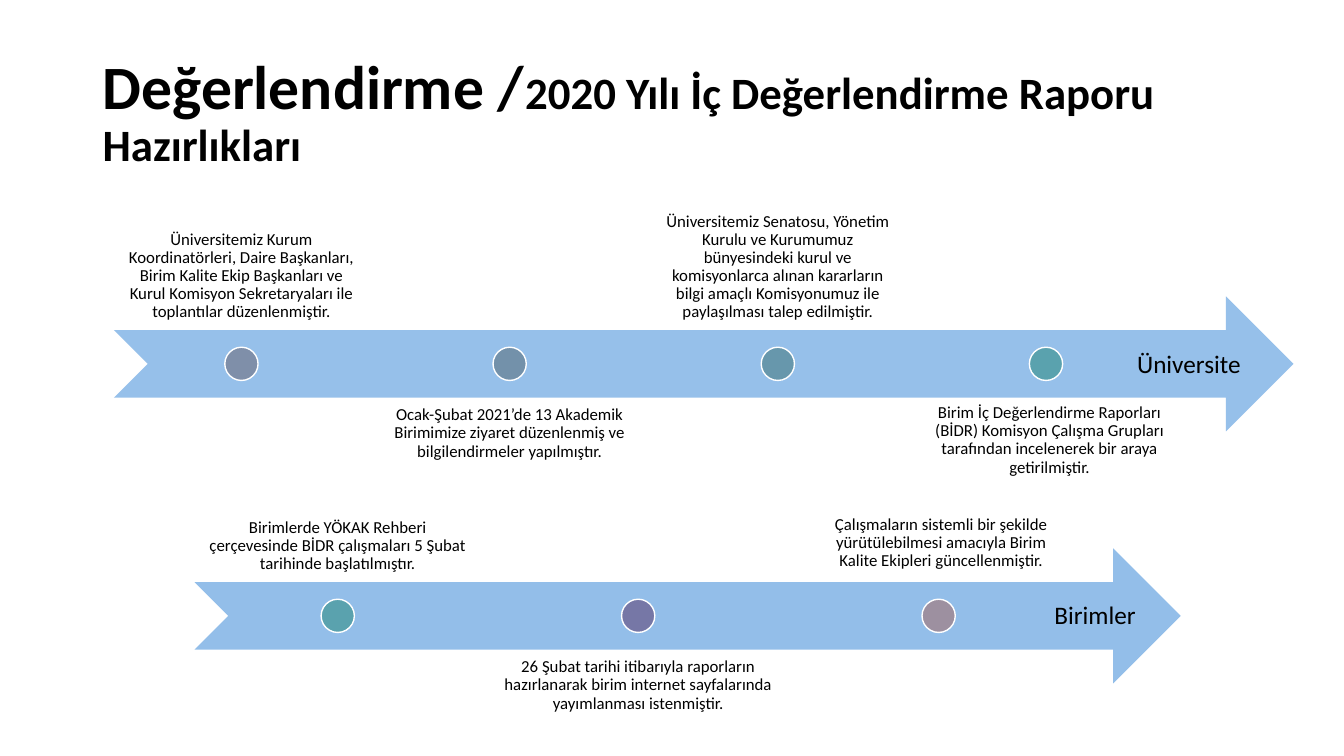
from dataclasses import dataclass
from lxml import etree
from pptx import Presentation
from pptx.dml.color import RGBColor
from pptx.enum.shapes import MSO_SHAPE as Shape
from pptx.enum.text import MSO_ANCHOR as Anchor, PP_ALIGN as Align
from pptx.oxml.ns import qn
from pptx.util import Inches, Pt


@dataclass(frozen=True)
class Theme:
    font: str = "Calibri"
    text: str = "000000"
    arrow: str = "297FD5"
    outline: str = "FFFFFF"
    title_size: int = 44
    subtitle_size: int = 32
    label_size: int = 18
    note_size: int = 12


THEME = Theme()

TITLE = [
    ("Değerlendirme /", THEME.title_size),
    ("2020 Yılı İç Değerlendirme Raporu Hazırlıkları", THEME.subtitle_size),
]

TIMELINES = [
    {
        "label": "Üniversite", "label_box": (11.18, 3.41, 1.24, 0.4),
        "arrow": (1.13, 2.94, 11.7), "note_width": 2.53, "pitch": 2.66, "opacity": 49,
        "dots": ["7F8FA9", "7391AA", "6797AC", "5AA2AE"],
        "notes": [
            "Üniversitemiz Kurum Koordinatörleri, Daire Başkanları, Birim Kalite Ekip "
            "Başkanları ve Kurul Komisyon Sekretaryaları ile toplantılar düzenlenmiştir.",
            "Ocak-Şubat 2021’de 13 Akademik Birimimize ziyaret düzenlenmiş ve "
            "bilgilendirmeler yapılmıştır.",
            "Üniversitemiz Senatosu, Yönetim Kurulu ve Kurumumuz bünyesindeki kurul ve "
            "komisyonlarca alınan kararların bilgi amaçlı Komisyonumuz ile paylaşılması "
            "talep edilmiştir.",
        ],
    },
    {
        "label": "Birimler", "label_box": (10.36, 5.9, 1.02, 0.4),
        "arrow": (1.93, 5.44, 9.78), "note_width": 2.84, "pitch": 2.98, "opacity": 50,
        "dots": ["5AA2AE", "7677A6", "9D90A0"],
        "notes": [
            "Birimlerde YÖKAK Rehberi çerçevesinde BİDR çalışmaları 5 Şubat tarihinde "
            "başlatılmıştır.",
            "26 Şubat tarihi itibarıyla raporların hazırlanarak birim internet "
            "sayfalarında yayımlanması istenmiştir.",
        ],
    },
]

MOVED_NOTES = [
    ("Birim İç Değerlendirme Raporları (BİDR) Komisyon Çalışma Grupları tarafından "
     "incelenerek bir araya getirilmiştir.", 8.99, 3.48, 2.84, Anchor.BOTTOM),
    ("Çalışmaların sistemli bir şekilde yürütülebilmesi amacıyla Birim Kalite Ekipleri "
     "güncellenmiştir.", 8.07, 5.03, 2.53, Anchor.TOP),
]

BAND_HEIGHT = 1.34
NOTE_OFFSET = 1.0
DOT_SIZE = 0.33
NOTE_INSET = 0.09


def color(value):
    return RGBColor.from_string(value)


def style_font(font, size, bold=False):
    font.name = THEME.font
    font.size = Pt(size)
    font.bold = bold
    font.color.rgb = color(THEME.text)


def add_text(slide, box, anchor=Anchor.TOP, wrap=True):
    frame = slide.shapes.add_textbox(*map(Inches, box)).text_frame
    frame.word_wrap = wrap
    frame.vertical_anchor = anchor
    return frame


def add_title(slide):
    paragraph = add_text(slide, (0.92, 0.4, 11.5, 1.45), Anchor.MIDDLE).paragraphs[0]
    paragraph.line_spacing = 0.9
    for text, size in TITLE:
        run = paragraph.add_run()
        run.text = text
        style_font(run.font, size, bold=True)


def add_note(slide, text, left, top, width, anchor):
    frame = add_text(slide, (left, top, width, BAND_HEIGHT), anchor)
    frame.margin_left = frame.margin_right = Inches(NOTE_INSET)
    frame.margin_top = frame.margin_bottom = Inches(NOTE_INSET)
    paragraph = frame.paragraphs[0]
    paragraph.text = text
    paragraph.alignment = Align.CENTER
    paragraph.line_spacing = 0.9
    style_font(paragraph.font, THEME.note_size)


def add_filled(slide, kind, box, fill):
    shape = slide.shapes.add_shape(kind, *map(Inches, box))
    shape.shadow.inherit = False
    shape.fill.solid()
    shape.fill.fore_color.rgb = color(fill)
    return shape


def add_timeline(slide, timeline):
    left, top, width = timeline["arrow"]
    arrow = add_filled(slide, Shape.NOTCHED_RIGHT_ARROW,
                       (left, top, width, BAND_HEIGHT), THEME.arrow)
    arrow.line.fill.background()
    fill_color = next(arrow.element.iter(qn("a:srgbClr")))
    etree.SubElement(fill_color, qn("a:alpha"), val=str(timeline["opacity"] * 1000))

    note_width, pitch = timeline["note_width"], timeline["pitch"]
    for index, text in enumerate(timeline["notes"]):
        above = index % 2 == 0
        note_top = top - NOTE_OFFSET if above else top + NOTE_OFFSET
        add_note(slide, text, left + index * pitch, note_top, note_width,
                 Anchor.BOTTOM if above else Anchor.TOP)

    dot_left = left + (note_width - DOT_SIZE) / 2
    dot_top = top + (BAND_HEIGHT - DOT_SIZE) / 2
    for index, fill in enumerate(timeline["dots"]):
        dot = add_filled(slide, Shape.OVAL,
                         (dot_left + index * pitch, dot_top, DOT_SIZE, DOT_SIZE), fill)
        dot.line.color.rgb = color(THEME.outline)
        dot.line.width = Pt(1)

    paragraph = add_text(slide, timeline["label_box"], wrap=False).paragraphs[0]
    paragraph.text = timeline["label"]
    style_font(paragraph.font, THEME.label_size)


def main():
    presentation = Presentation()
    presentation.slide_width = Inches(13.33)
    presentation.slide_height = Inches(7.5)
    slide = presentation.slides.add_slide(presentation.slide_layouts[6])
    add_title(slide)
    for timeline in TIMELINES:
        add_timeline(slide, timeline)
    for note in MOVED_NOTES:
        add_note(slide, *note)
    presentation.save("out.pptx")


if __name__ == "__main__":
    main()
